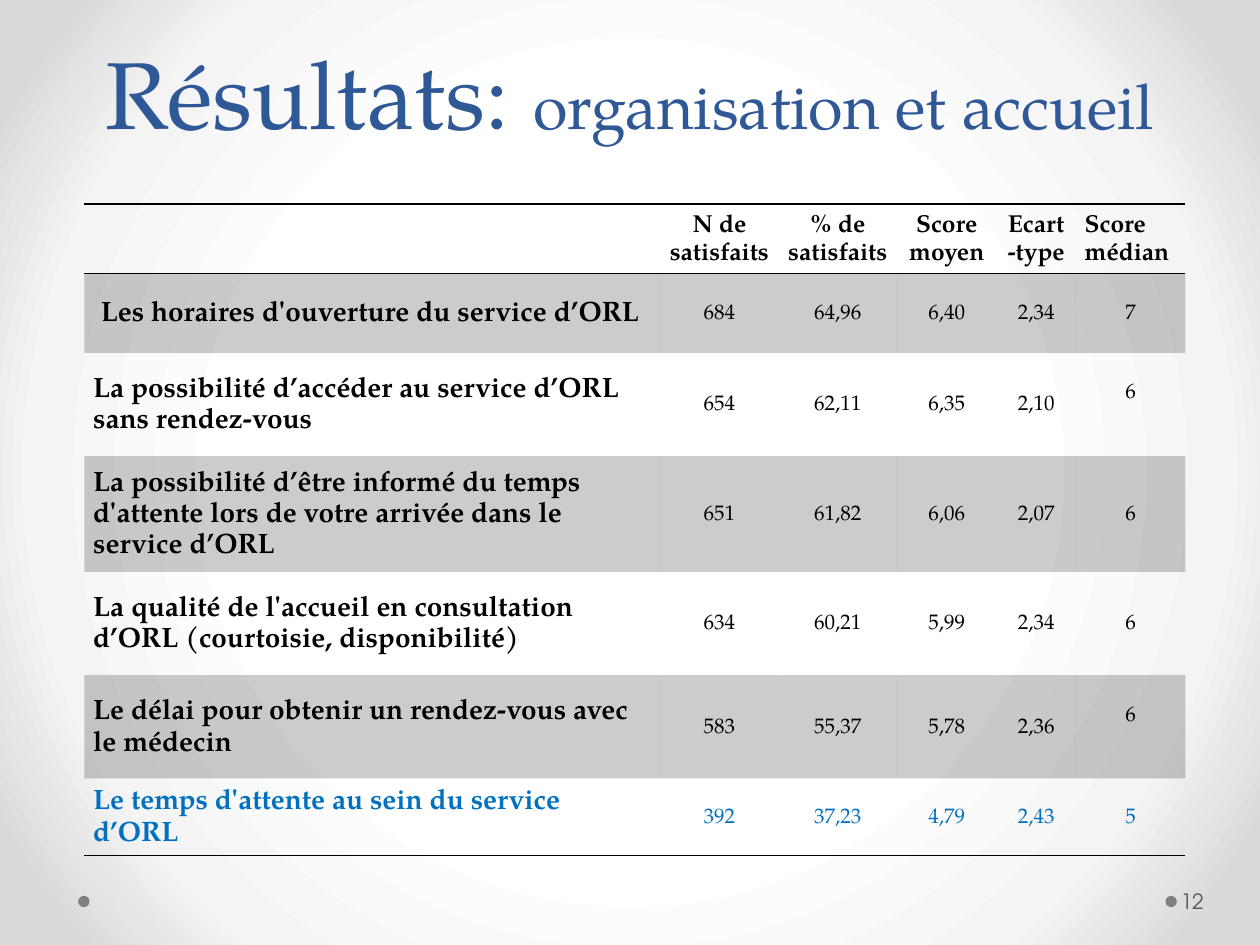
from dataclasses import dataclass

from lxml.etree import SubElement
from pptx import Presentation
from pptx.dml.color import RGBColor
from pptx.enum.shapes import MSO_SHAPE
from pptx.enum.text import MSO_ANCHOR, PP_ALIGN
from pptx.oxml import parse_xml
from pptx.oxml.ns import nsdecls, qn
from pptx.util import Inches, Pt


@dataclass(frozen=True)
class Theme:
    serif: str = "TeX Gyre Pagella"
    sans: str = "TeX Gyre Adventor"
    title: str = "2F5897"
    ink: str = "000000"
    accent: str = "0070C0"
    dot: str = "808080"
    number: str = "595959"
    glow: tuple = ((50, "FFFFFF"), (76, "F4F4F4"), (92, "DADADA"))
    band_alpha: int = 20
    title_size: int = 54
    subtitle_size: int = 36
    label_size: int = 16
    header_size: int = 14
    value_size: int = 12


class Deck:
    def __init__(self, prs, theme):
        self.theme = theme
        self.s = prs.slides.add_slide(prs.slide_layouts[5])

    def background(self):
        stops = "".join(
            f'<a:gs pos="{pos * 1000}"><a:srgbClr val="{color}"/></a:gs>'
            for pos, color in self.theme.glow
        )
        bg = parse_xml(
            f'<p:bg {nsdecls("p", "a")}><p:bgPr><a:gradFill rotWithShape="1">'
            f"<a:gsLst>{stops}</a:gsLst>"
            '<a:path path="circle"><a:fillToRect l="50000" t="50000" r="50000" b="50000"/></a:path>'
            "</a:gradFill><a:effectLst/></p:bgPr></p:bg>"
        )
        self.s.element.cSld.insert(0, bg)

    def run(self, p, text, size, color, font=None, bold=False):
        r = p.add_run()
        r.text = text
        r.font.name = font or self.theme.serif
        r.font.size = Pt(size)
        r.font.bold = bold
        r.font.color.rgb = RGBColor.from_string(color)

    def title(self, main, detail):
        t = self.theme
        sp = self.s.shapes.title
        sp.left, sp.top, sp.width, sp.height = map(Inches, (0.5, 0.29, 9, 0.94))
        tf = sp.text_frame
        tf.vertical_anchor = MSO_ANCHOR.BOTTOM
        p = tf.paragraphs[0]
        p.alignment = PP_ALIGN.CENTER
        p.line_spacing = Pt(58)
        self.run(p, main, t.title_size, t.title)
        self.run(p, detail, t.subtitle_size, t.title)

    def dot(self, left):
        sp = self.s.shapes.add_shape(
            MSO_SHAPE.OVAL, Inches(left), Inches(7.11), Inches(0.09), Inches(0.09)
        )
        sp.shadow.inherit = False
        sp.fill.solid()
        sp.fill.fore_color.rgb = RGBColor.from_string(self.theme.dot)
        sp.line.fill.background()

    def page_number(self, text):
        t = self.theme
        tf = self.s.shapes.add_textbox(
            Inches(9.34), Inches(6.95), Inches(0.61), Inches(0.4)
        ).text_frame
        tf.word_wrap = True
        tf.vertical_anchor = MSO_ANCHOR.MIDDLE
        tf.margin_left = Inches(0.03)
        tf.margin_right = Inches(0.05)
        self.run(tf.paragraphs[0], text, t.value_size, t.number, t.sans)

    def border(self, cell, *sides):
        tcPr = cell._tc.get_or_add_tcPr()
        for i, side in enumerate(sides):
            ln = tcPr.makeelement(qn(f"a:{side}"), {"w": str(Pt(1))})
            fill = SubElement(ln, qn("a:solidFill"))
            SubElement(fill, qn("a:srgbClr"), val=self.theme.ink)
            tcPr.insert(i, ln)

    def band(self, cell):
        cell.fill.solid()
        cell.fill.fore_color.rgb = RGBColor.from_string(self.theme.ink)
        color = next(cell._tc.tcPr.iter(qn("a:srgbClr")))
        SubElement(color, qn("a:alpha"), val=str(self.theme.band_alpha * 1000))

    def cell(self, cell, text, size, color, bold, align):
        cell.vertical_anchor = MSO_ANCHOR.MIDDLE
        cell.margin_left = cell.margin_right = Inches(0.07)
        cell.margin_top = cell.margin_bottom = 0
        p = cell.text_frame.paragraphs[0]
        p.alignment = align
        p.line_spacing = 1.15
        self.run(p, text, size, color, bold=bold)

    def table(self, headers, rows, widths, heights):
        t = self.theme
        tbl = self.s.shapes.add_table(
            len(heights), len(widths), Inches(0.67), Inches(1.62),
            Inches(sum(widths)), Inches(sum(heights)),
        ).table
        tbl.first_row = tbl.horz_banding = False
        style = tbl._tbl.tblPr.find(qn("a:tableStyleId"))
        style.text = "{2D5ABB26-0587-4C30-8999-92F81FD0307C}"
        for column, width in zip(tbl.columns, widths):
            column.width = Inches(width)
        for row, height in zip(tbl.rows, heights):
            row.height = Inches(height)
        last_row, last_col = len(rows), len(widths) - 1
        for i, texts in enumerate([headers, *rows]):
            for j, text in enumerate(texts):
                cell = tbl.cell(i, j)
                bold = i == 0 or j == 0
                size = t.header_size if i == 0 else t.label_size if j == 0 else t.value_size
                left = j == 0 or (i == 0 and j == last_col)
                if text:
                    self.cell(
                        cell, text, size, t.accent if i == last_row else t.ink, bold,
                        PP_ALIGN.LEFT if left else PP_ALIGN.CENTER,
                    )
                if i % 2:
                    self.band(cell)
                else:
                    cell.fill.background()
                if i == 0:
                    self.border(cell, "lnT", "lnB")
                elif i == last_row:
                    self.border(cell, "lnB")
        return tbl


HEADERS = ("", "N de satisfaits", "% de satisfaits", "Score moyen", "Ecart-type", "Score médian")
ROWS = (
    ("Les horaires d'ouverture du service d’ORL", "684", "64,96", "6,40", "2,34", "7"),
    ("La possibilité d’accéder au service d’ORL sans rendez-vous",
     "654", "62,11", "6,35", "2,10", "6"),
    ("La possibilité d’être informé du temps d'attente lors de votre arrivée dans le service d’ORL",
     "651", "61,82", "6,06", "2,07", "6"),
    ("La qualité de l'accueil en consultation d’ORL (courtoisie, disponibilité)",
     "634", "60,21", "5,99", "2,34", "6"),
    ("Le délai pour obtenir un rendez-vous avec le médecin",
     "583", "55,37", "5,78", "2,36", "6"),
    ("Le temps d'attente au sein du service d’ORL", "392", "37,23", "4,79", "2,43", "5"),
)
WIDTHS = (4.57, 0.94, 0.94, 0.79, 0.63, 0.87)
HEIGHTS = (0.55, 0.63, 0.82, 0.82, 0.82, 0.82, 0.55)


def main():
    prs = Presentation()
    prs.slide_width, prs.slide_height = Inches(10), Inches(7.5)
    deck = Deck(prs, Theme())
    deck.background()
    for left in (9.25, 0.62):
        deck.dot(left)
    deck.title("Résultats: ", "organisation et accueil")
    deck.page_number("12")
    tbl = deck.table(HEADERS, ROWS, WIDTHS, HEIGHTS)
    tbl.cell(1, 0).margin_left = Inches(0.13)
    for row in (2, 5):
        tbl.cell(row, 5).margin_bottom = Inches(0.19)
    prs.save("out.pptx")


if __name__ == "__main__":
    main()
